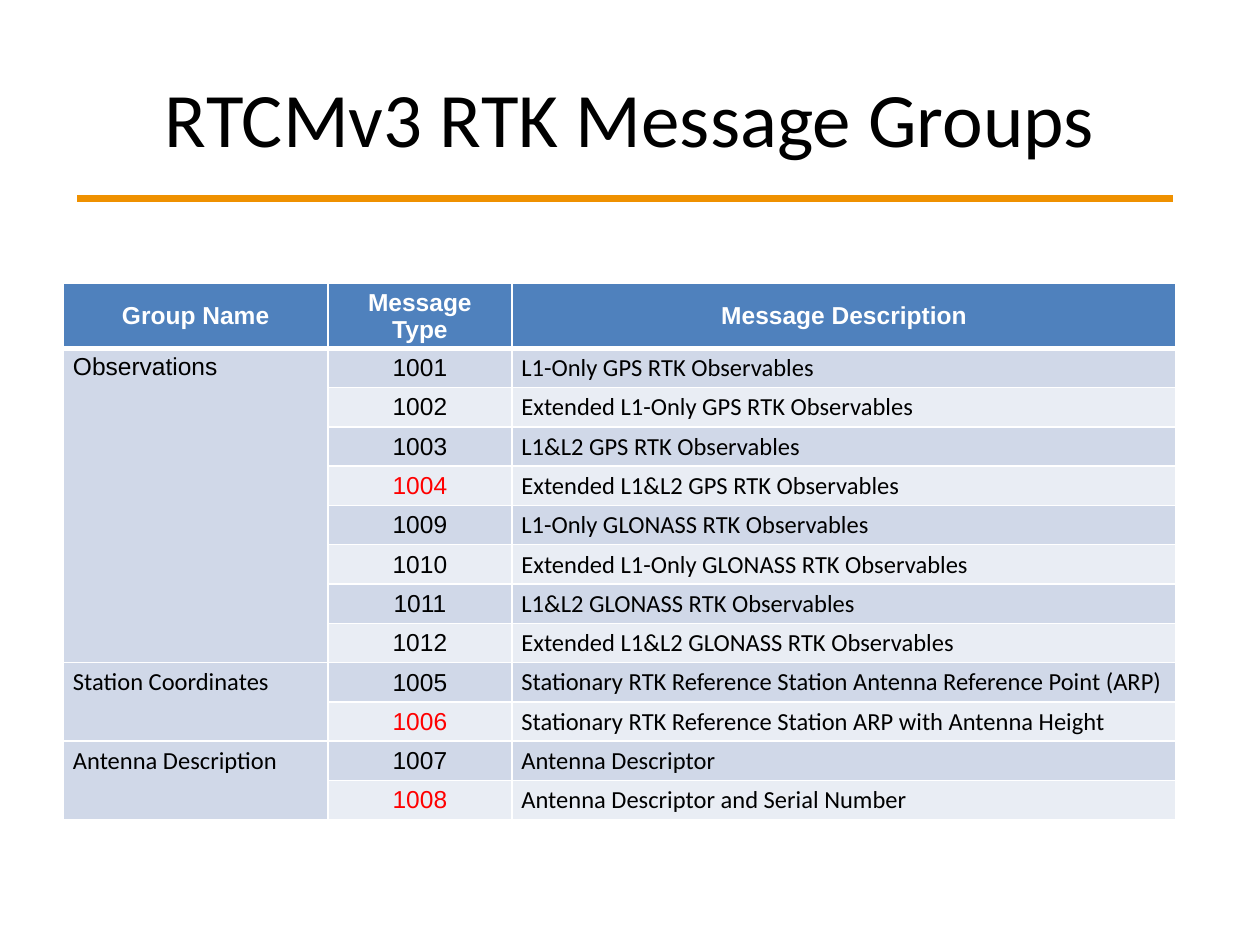
from dataclasses import dataclass

from lxml.etree import SubElement
from pptx import Presentation
from pptx.dml.color import RGBColor
from pptx.enum.shapes import MSO_CONNECTOR
from pptx.enum.text import MSO_ANCHOR, PP_ALIGN
from pptx.oxml.ns import qn
from pptx.slide import Slide
from pptx.table import _Cell
from pptx.util import Cm, Pt

HEADER_BLUE = "4F81BD"
DARK_BAND = "D0D8E8"
LIGHT_BAND = "E9EDF4"
ORANGE = "EF9100"
WHITE = "FFFFFF"
BLACK = "000000"
RED = "FF0000"

HEADINGS = ("Group Name", "Message Type", "Message Description")
COLUMN_WIDTHS = (5.33, 3.71, 13.39)
ROW_HEIGHT = 0.78


@dataclass(frozen=True)
class Message:
    number: str
    description: str
    highlighted: bool = False


@dataclass(frozen=True)
class Group:
    name: str
    font: str
    messages: tuple[Message, ...]


GROUPS = (
    Group("Observations", "Arial", (
        Message("1001", "L1-Only GPS RTK Observables"),
        Message("1002", "Extended L1-Only GPS RTK Observables"),
        Message("1003", "L1&L2 GPS RTK Observables"),
        Message("1004", "Extended L1&L2 GPS RTK Observables", True),
        Message("1009", "L1-Only GLONASS RTK Observables"),
        Message("1010", "Extended L1-Only GLONASS RTK Observables"),
        Message("1011", "L1&L2 GLONASS RTK Observables"),
        Message("1012", "Extended L1&L2 GLONASS RTK Observables"),
    )),
    Group("Station Coordinates", "Calibri", (
        Message("1005", "Stationary RTK Reference Station Antenna Reference Point (ARP)"),
        Message("1006", "Stationary RTK Reference Station ARP with Antenna Height", True),
    )),
    Group("Antenna Description", "Calibri", (
        Message("1007", "Antenna Descriptor"),
        Message("1008", "Antenna Descriptor and Serial Number", True),
    )),
)


@dataclass(frozen=True)
class CellStyle:
    fill: str
    font: str = "Calibri"
    color: str = BLACK
    bold: bool = False
    centered: bool = False
    bottom_border: float = 1


def rgb(value: str) -> RGBColor:
    return RGBColor.from_string(value)


def add_borders(cell: _Cell, bottom: float) -> None:
    properties = cell._tc.get_or_add_tcPr()
    for side, width in (("L", 1), ("R", 1), ("T", 1), ("B", bottom)):
        border = SubElement(properties, qn(f"a:ln{side}"), w=str(Pt(width)))
        fill = SubElement(border, qn("a:solidFill"))
        SubElement(fill, qn("a:srgbClr"), val=WHITE)


def style_cell(cell: _Cell, style: CellStyle) -> None:
    add_borders(cell, style.bottom_border)
    cell.fill.solid()
    cell.fill.fore_color.rgb = rgb(style.fill)
    cell.margin_left = cell.margin_right = Cm(0.19)
    cell.margin_top, cell.margin_bottom = Cm(0.1), Cm(0.09)
    cell.vertical_anchor = MSO_ANCHOR.MIDDLE if style.centered else MSO_ANCHOR.TOP


def write_cell(cell: _Cell, text: str, style: CellStyle) -> None:
    style_cell(cell, style)
    cell.text_frame.text = text
    paragraph = cell.text_frame.paragraphs[0]
    paragraph.alignment = PP_ALIGN.CENTER if style.centered else PP_ALIGN.LEFT
    font = paragraph.runs[0].font
    font.name, font.size, font.bold = style.font, Pt(14), style.bold
    font.color.rgb = rgb(style.color)


def add_title(slide: Slide, text: str) -> None:
    title = slide.shapes.title
    title.left, title.top = Cm(1.27), Cm(0.76)
    title.width, title.height = Cm(22.86), Cm(3.18)
    title.text_frame.text = text
    title.text_frame.vertical_anchor = MSO_ANCHOR.MIDDLE
    paragraph = title.text_frame.paragraphs[0]
    paragraph.alignment = PP_ALIGN.CENTER
    font = paragraph.runs[0].font
    font.name, font.size = "Calibri", Pt(44)
    font.color.rgb = rgb(BLACK)


def add_title_rule(slide: Slide) -> None:
    rule = slide.shapes.add_connector(
        MSO_CONNECTOR.STRAIGHT, Cm(1.56), Cm(4), Cm(23.64), Cm(4))
    rule.line.color.rgb = rgb(ORANGE)
    rule.line.width = Pt(4)
    SubElement(rule._element.spPr, qn("a:effectLst"))


def add_message_table(slide: Slide) -> None:
    row_count = 1 + sum(len(group.messages) for group in GROUPS)
    table = slide.shapes.add_table(
        row_count, len(HEADINGS), Cm(1.28), Cm(5.72),
        Cm(sum(COLUMN_WIDTHS)), Cm(ROW_HEIGHT * row_count)).table
    for column, width in zip(table.columns, COLUMN_WIDTHS):
        column.width = Cm(width)
    for table_row in table.rows:
        table_row.height = Cm(ROW_HEIGHT)

    heading_style = CellStyle(HEADER_BLUE, "Arial", WHITE, True, True, 3)
    for column_index, heading in enumerate(HEADINGS):
        write_cell(table.cell(0, column_index), heading, heading_style)

    row = 1
    for group in GROUPS:
        last_row = row + len(group.messages) - 1
        group_style = CellStyle(DARK_BAND, group.font)
        table.cell(row, 0).merge(table.cell(last_row, 0))
        write_cell(table.cell(row, 0), group.name, group_style)
        for covered_row in range(row + 1, last_row + 1):
            style_cell(table.cell(covered_row, 0), group_style)
        for row, message in enumerate(group.messages, row):
            band = DARK_BAND if row % 2 else LIGHT_BAND
            number_color = RED if message.highlighted else BLACK
            write_cell(table.cell(row, 1), message.number,
                       CellStyle(band, "Arial", number_color, centered=True))
            write_cell(table.cell(row, 2), message.description, CellStyle(band))
        row = last_row + 1


def main() -> None:
    presentation = Presentation()
    presentation.slide_width, presentation.slide_height = Cm(25.4), Cm(19.05)
    slide = presentation.slides.add_slide(presentation.slide_layouts[5])
    add_title_rule(slide)
    add_title(slide, "RTCMv3 RTK Message Groups")
    add_message_table(slide)
    presentation.save("out.pptx")


if __name__ == "__main__":
    main()
